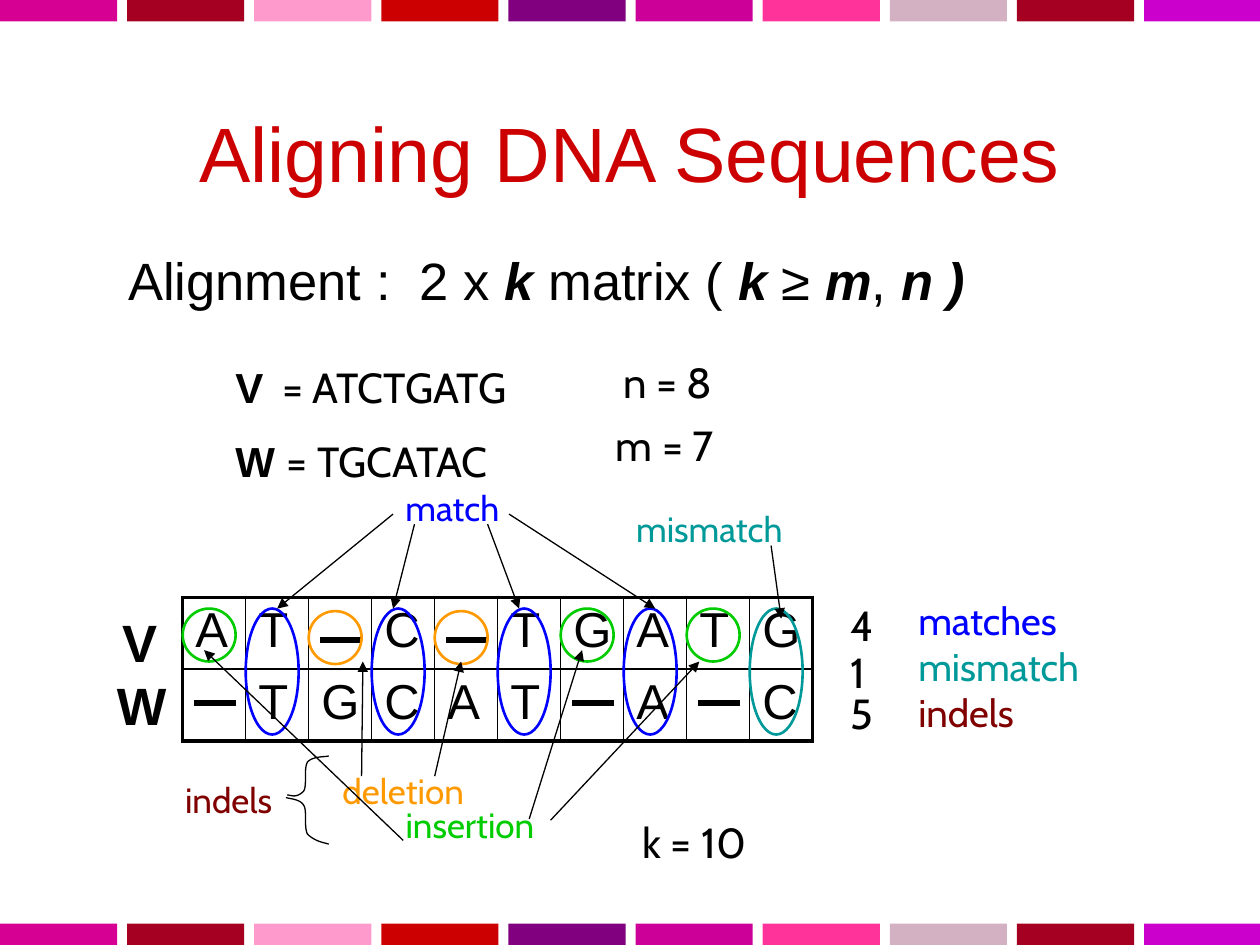
from dataclasses import dataclass

from lxml import etree
from pptx import Presentation
from pptx.dml.color import RGBColor
from pptx.enum.shapes import MSO_CONNECTOR, MSO_SHAPE
from pptx.enum.text import MSO_ANCHOR, MSO_AUTO_SIZE, PP_ALIGN
from pptx.oxml.ns import qn
from pptx.util import Inches, Pt

STRAIGHT = MSO_CONNECTOR.STRAIGHT
ELLIPSE, RECTANGLE = MSO_SHAPE.OVAL, MSO_SHAPE.RECTANGLE
CENTER, MIDDLE = PP_ALIGN.CENTER, MSO_ANCHOR.MIDDLE
GROW = MSO_AUTO_SIZE.SHAPE_TO_FIT_TEXT


@dataclass(frozen=True)
class Theme:
    sans: str = "Arial"
    label: str = "Cabin"
    black: str = "000000"
    title: str = "CC0000"
    match: str = "0000FF"
    mismatch: str = "009999"
    deletion: str = "FF9900"
    insertion: str = "00CC00"
    indel: str = "800000"
    title_size: int = 44
    lead_size: int = 30
    base_size: int = 28
    body_size: int = 24
    legend_size: int = 22
    label_size: int = 20
    bars: tuple = ("D60093", "A50021", "FE9ACC", "CC0000", "800080",
                   "CC0099", "FF3399", "D3B1C2", "A50021", "CC00CC")


THEME = Theme()
ALIGNMENT = ("AT-C-TGATG", "-TGCAT-A-C")
TABLE_LEFT, TABLE_TOP, COLUMN, ROW = 1.45, 4.74, 0.5, 0.57


def style(font, size, color=THEME.black, name=THEME.label, bold=None):
    font.size, font.name, font.bold = Pt(size), name, bold
    font.color.rgb = RGBColor.from_string(color)


def add_box(page, left, top, width, height, wrap=False):
    frame = page.shapes.add_textbox(*map(Inches, (left, top, width, height))).text_frame
    frame.word_wrap = wrap
    frame.auto_size = GROW
    return frame


def add_label(page, text, place, size=THEME.body_size, color=THEME.black,
              name=THEME.label, bold=None):
    para = add_box(page, *place).paragraphs[0]
    para.text = text
    style(para.font, size, color, name, bold)


def add_sequence(page, name, letters, top):
    """Write a bold sequence name followed by its letters."""
    para = add_box(page, 1.77, top, 2.77, 0.5, wrap=True).paragraphs[0]
    style(para.font, THEME.body_size)
    span = para.add_run()
    span.text = name
    span.font.name, span.font.bold = THEME.sans, True
    para.add_run().text = letters


def add_definition(page):
    para = add_box(page, 0.92, 1.92, 8.67, 0.6, wrap=True).paragraphs[0]
    style(para.font, THEME.lead_size, name=THEME.sans)
    parts = ("Alignment :  2 x ", "k", " matrix ( ", "k ", "≥ ", "m", ", ", "n )")
    for index, text in enumerate(parts):
        span = para.add_run()
        span.text = text
        if index % 2:
            span.font.bold = span.font.italic = True


def add_line(page, start, end, width=0.75, arrow=True):
    line = page.shapes.add_connector(STRAIGHT, *map(Inches, (*start, *end)))
    line.line.width = Pt(width)
    line.line.color.rgb = RGBColor.from_string(THEME.black)
    if arrow:
        etree.SubElement(line.line._get_or_add_ln(), qn("a:tailEnd"), type="triangle")
    etree.SubElement(line._element.spPr, qn("a:effectLst"))


def add_ring(page, left, top, color, height=0.42):
    ring = page.shapes.add_shape(ELLIPSE, *map(Inches, (left, top, 0.42, height)))
    ring.shadow.inherit = False
    ring.fill.background()
    ring.line.width = Pt(1.5)
    ring.line.color.rgb = RGBColor.from_string(color)


def add_curve(page, start, *beziers, steps=12):
    """Draw an open outline through cubic Bezier segments."""
    points = [start]
    for first, second, end in beziers:
        origin = points[-1]
        for step in range(1, steps + 1):
            t = step / steps
            weights = ((1 - t) ** 3, 3 * t * (1 - t) ** 2, 3 * t * t * (1 - t), t ** 3)
            points.append(tuple(sum(w * p[axis] for w, p in
                                    zip(weights, (origin, first, second, end)))
                                for axis in (0, 1)))
    spots = [(Inches(x), Inches(y)) for x, y in points]
    builder = page.shapes.build_freeform(*spots[0])
    builder.add_line_segments(spots[1:], close=False)
    curve = builder.convert_to_shape()
    curve.shadow.inherit = False
    curve.fill.background()
    curve.line.width = Pt(0.75)
    curve.line.color.rgb = RGBColor.from_string(THEME.black)


def set_borders(cell, widths):
    properties = cell._tc.get_or_add_tcPr()
    for side, width in zip("LRTB", widths):
        border = etree.SubElement(properties, qn(f"a:ln{side}"), w=str(Pt(width)))
        fill = etree.SubElement(border, qn("a:solidFill"))
        etree.SubElement(fill, qn("a:srgbClr"), val=THEME.black)


def add_alignment_table(page):
    rows, columns = len(ALIGNMENT), len(ALIGNMENT[0])
    table = page.shapes.add_table(
        rows, columns, Inches(TABLE_LEFT), Inches(TABLE_TOP),
        Inches(COLUMN * columns), Inches(ROW * rows)).table
    table.first_row = table.horz_banding = False
    for row, letters in enumerate(ALIGNMENT):
        for column, letter in enumerate(letters):
            cell = table.cell(row, column)
            edges = (column == 0, column == columns - 1, row == 0, row == rows - 1)
            set_borders(cell, [2.25 if edge else 1 for edge in edges])
            cell.fill.background()
            if letter != "-":
                para = cell.text_frame.paragraphs[0]
                para.text = letter
                style(para.font, THEME.base_size, name=THEME.sans)


def add_gap_dashes(page):
    for letters, height in zip(ALIGNMENT, (5.08, 5.58)):
        for column, letter in enumerate(letters):
            if letter == "-":
                left = TABLE_LEFT + 0.09 + column * COLUMN
                add_line(page, (left, height), (left + 0.33, height), 3, arrow=False)


def add_rings(page):
    for column, (upper, lower) in enumerate(zip(*ALIGNMENT)):
        left = TABLE_LEFT + column * COLUMN
        if upper == "-":
            add_ring(page, left, 4.85, THEME.deletion)
        elif lower == "-":
            add_ring(page, left, 4.83, THEME.insertion)
        else:
            color = THEME.match if upper == lower else THEME.mismatch
            add_ring(page, left, 4.83, color, height=1)


def add_legend(page):
    for count, top in (("4", 4.71), ("1", 5.08), ("5", 5.41)):
        add_label(page, count, (6.65, top, 0.39, 0.51))
    frame = add_box(page, 7.19, 4.69, 2.8, 1.24, wrap=True)
    entries = (("matches", THEME.match), ("mismatch", THEME.mismatch),
               ("indels", THEME.indel))
    for index, (text, color) in enumerate(entries):
        para = frame.add_paragraph() if index else frame.paragraphs[0]
        para.text = text
        style(para.font, THEME.legend_size, color)


def add_bars(page, top):
    pitch = 9.08 / (len(THEME.bars) - 1)
    for index, color in enumerate(THEME.bars):
        bar = page.shapes.add_shape(
            RECTANGLE, *map(Inches, (index * pitch, top, 0.93, 0.17)))
        bar.shadow.inherit = False
        bar.fill.solid()
        bar.fill.fore_color.rgb = RGBColor.from_string(color)
        bar.line.fill.background()


def add_title(page, text):
    title = page.shapes.title
    title.left, title.top, title.width, title.height = map(Inches, (0.5, 0.58, 9, 1.25))
    title.text_frame.vertical_anchor = MIDDLE
    para = title.text_frame.paragraphs[0]
    para.text, para.alignment = text, CENTER
    style(para.font, THEME.title_size, THEME.title, THEME.sans)


def main():
    deck = Presentation()
    deck.slide_width, deck.slide_height = Inches(10), Inches(7.5)
    page = deck.slides.add_slide(deck.slide_layouts[5])
    add_title(page, "Aligning DNA Sequences")
    add_definition(page)
    add_sequence(page, "V", "  = ATCTGATG", 2.82)
    add_sequence(page, "W ", "= TGCATAC", 3.41)
    for text, place in (("n = 8", (4.85, 2.78, 1.02, 0.5)),
                        ("m = 7", (4.79, 3.28, 1.17, 0.5)),
                        ("k = 10", (5, 6.43, 1.65, 0.51))):
        add_label(page, text, place)
    add_alignment_table(page)
    add_gap_dashes(page)
    for text, place in (("V", (0.87, 4.79, 0.58, 0.6)), ("W", (0.83, 5.29, 0.71, 0.6))):
        add_label(page, text, place, THEME.lead_size, name=THEME.sans, bold=True)
    add_rings(page)
    for text, color, place in (
            ("match", THEME.match, (3.12, 3.81, 0.96, 0.43)),
            ("mismatch", THEME.mismatch, (4.95, 3.98, 1.38, 0.43)),
            ("deletion", THEME.deletion, (2.62, 6.06, 1.17, 0.43)),
            ("insertion", THEME.insertion, (3.12, 6.33, 1.25, 0.43)),
            ("indels", THEME.indel, (1.37, 6.13, 0.91, 0.43))):
        add_label(page, text, place, THEME.label_size, color)
    for start, end in (
            ((3.12, 4.08), (2.2, 4.83)), ((3.29, 4.16), (3.12, 4.83)),
            ((3.87, 4.16), (4.12, 4.83)), ((4.04, 4.08), (5.2, 4.83)),
            ((6.12, 4.33), (6.2, 4.91)),
            ((2.87, 6.16), (2.88, 5.25)), ((3.45, 6.16), (3.66, 5.25)),
            ((3.2, 6.67), (1.62, 5.16)), ((4.2, 6.5), (4.62, 5.16)),
            ((4.37, 6.51), (5.55, 5.25))):
        add_line(page, start, end)
    add_curve(page, (2.61, 6), ((2.58, 6.01), (2.48, 6), (2.44, 6.05)),
              ((2.41, 6.1), (2.44, 6.24), (2.41, 6.28)),
              ((2.35, 6.34), (2.31, 6.31), (2.28, 6.31)))
    add_curve(page, (2.27, 6.33), ((2.29, 6.34), (2.38, 6.34), (2.41, 6.39)),
              ((2.44, 6.43), (2.41, 6.56), (2.44, 6.62)),
              ((2.5, 6.68), (2.58, 6.69), (2.61, 6.7)))
    add_legend(page)
    for top in (0, 7.33):
        add_bars(page, top)
    deck.save("out.pptx")


if __name__ == "__main__":
    main()
